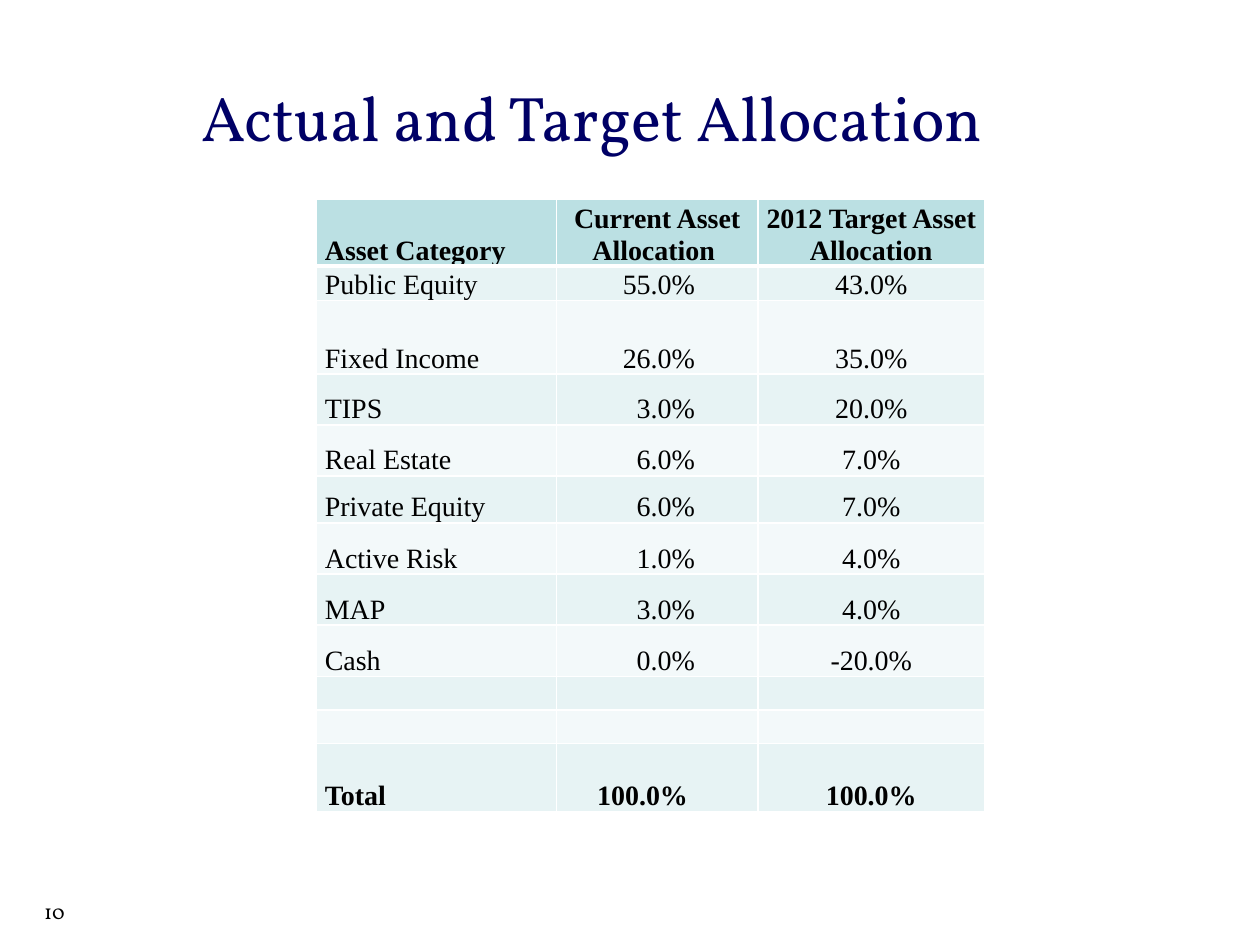
from lxml import etree
from pptx import Presentation
from pptx import util as u
from pptx.dml.color import RGBColor
from pptx.enum import text
from pptx.oxml import ns

NAVY = RGBColor(0x00, 0x00, 0x66)
BLACK = RGBColor(0x00, 0x00, 0x00)
HEADER_TEAL = RGBColor(0xBB, 0xE0, 0xE3)
BANDS = (RGBColor(0xE7, 0xF3, 0xF4), RGBColor(0xF3, 0xF9, 0xFA))
BORDER = "FFFFFF"

ALLOCATIONS = [
    ("Asset Category", "Current Asset Allocation ", "2012 Target Asset Allocation"),
    ("Public Equity", "55.0%", "43.0%"),
    ("Fixed Income", "26.0%", "35.0%"),
    ("TIPS", "3.0%", "20.0%"),
    ("Real Estate", "6.0%", "7.0%"),
    ("Private Equity", "6.0%", "7.0%"),
    ("Active Risk", "1.0%", "4.0%"),
    ("MAP", "3.0%", "4.0%"),
    ("Cash", "0.0%", "-20.0%"),
    ("", "", ""),
    ("", "", ""),
    ("Total", "100.0% ", "100.0%"),
]
COLUMN_WIDTHS = (4.85, 4.06, 4.57)
ROW_HEIGHTS = (1.3, 0.69, 1.49, 1.02, 1.03, 0.95, 1.03, 1.03, 1.03, 0.66, 0.66, 1.37)
ALIGNMENTS = (text.PP_ALIGN.LEFT, text.PP_ALIGN.RIGHT, text.PP_ALIGN.CENTER)
SIDE_INSETS = ((0.18, 0.18), (0.18, 1.27), (0, 0))


def add_run(paragraph, wording, font_name, size, color, bold=False):
    run = paragraph.add_run()
    run.text = wording
    run.font.name = font_name
    run.font.size = u.Pt(size)
    run.font.color.rgb = color
    run.font.bold = bold


def place(part, box):
    part.left, part.top, part.width, part.height = (u.Cm(side) for side in box)


def add_heading(slide, box):
    heading = slide.shapes.title
    place(heading, box)
    frame = heading.text_frame
    frame.auto_size = text.MSO_AUTO_SIZE.NONE
    frame.vertical_anchor = text.MSO_ANCHOR.MIDDLE
    frame.paragraphs[0].alignment = text.PP_ALIGN.LEFT
    add_run(frame.paragraphs[0], "Actual and Target Allocation", "Vollkorn", 36, NAVY)


def add_page_number(slide, box):
    page_number = slide.shapes.add_textbox(*(u.Cm(side) for side in box))
    page_number.text_frame.word_wrap = True
    add_run(page_number.text_frame.paragraphs[0], "10", "Vollkorn", 12, BLACK)


def set_borders(cell, bottom_width):
    properties = cell._tc.get_or_add_tcPr()
    for edge, width in (("L", 1), ("R", 1), ("T", 1), ("B", bottom_width)):
        line = etree.SubElement(properties, ns.qn(f"a:ln{edge}"), w=str(u.Pt(width)))
        fill = etree.SubElement(line, ns.qn("a:solidFill"))
        etree.SubElement(fill, ns.qn("a:srgbClr"), val=BORDER)


def fill_cell(cell, wording, row, column):
    is_header = row == 0
    is_total = row == len(ALLOCATIONS) - 1
    set_borders(cell, 3 if is_header else 1)
    cell.fill.solid()
    cell.fill.fore_color.rgb = HEADER_TEAL if is_header else BANDS[(row - 1) % 2]
    cell.vertical_anchor = text.MSO_ANCHOR.BOTTOM
    insets = SIDE_INSETS[0] if is_header and column == 1 else SIDE_INSETS[column]
    cell.margin_left, cell.margin_right = (u.Cm(inset) for inset in insets)
    cell.margin_top = cell.margin_bottom = 0
    paragraph = cell.text_frame.paragraphs[0]
    paragraph.alignment = ALIGNMENTS[column]
    if is_header and column:
        paragraph.alignment = text.PP_ALIGN.CENTER
    if not is_header:
        paragraph.line_spacing = u.Pt(16.2)
    if wording:
        add_run(paragraph, wording, "Times New Roman", 16, BLACK, is_header or is_total)
    else:
        etree.SubElement(paragraph._p, ns.qn("a:endParaRPr"), sz="1600")


def add_allocation_table(slide, left, top):
    allocation = slide.shapes.add_table(
        len(ALLOCATIONS), len(COLUMN_WIDTHS), u.Cm(left), u.Cm(top),
        u.Cm(sum(COLUMN_WIDTHS)), u.Cm(sum(ROW_HEIGHTS))).table
    for column, width in zip(allocation.columns, COLUMN_WIDTHS):
        column.width = u.Cm(width)
    for row, height in zip(allocation.rows, ROW_HEIGHTS):
        row.height = u.Cm(height)
    for row, entries in enumerate(ALLOCATIONS):
        for column, wording in enumerate(entries):
            fill_cell(allocation.cell(row, column), wording, row, column)


def main():
    deck = Presentation()
    deck.slide_width, deck.slide_height = u.Cm(25.4), u.Cm(19.05)
    slide = deck.slides.add_slide(deck.slide_layouts[5])
    add_heading(slide, (3.81, 0.76, 20.32, 3.18))
    add_page_number(slide, (0.64, 17.98, 1.9, 0.84))
    add_allocation_table(slide, 6.37, 4.01)
    deck.save("out.pptx")


if __name__ == "__main__":
    main()
